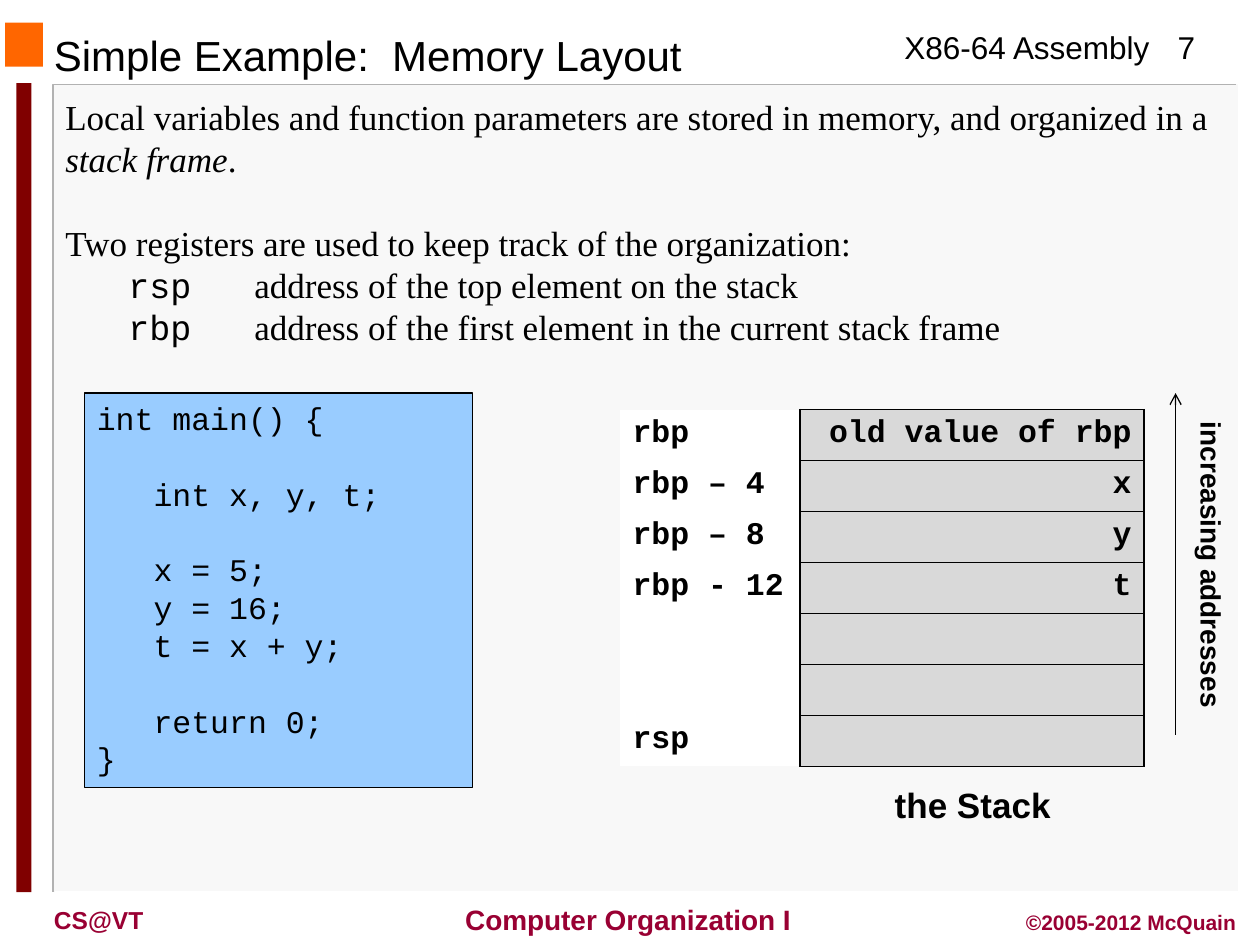
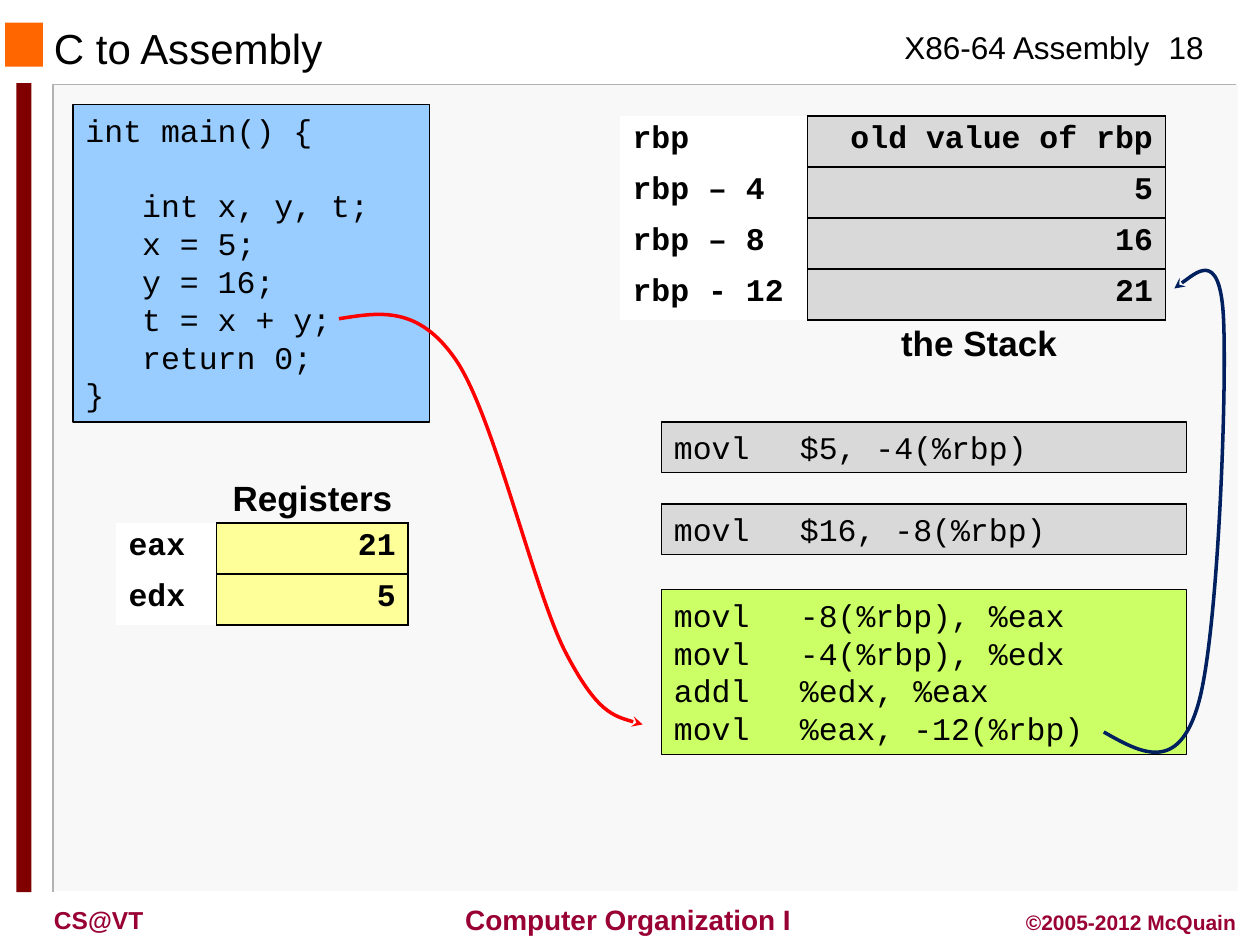
from lxml import etree
from pptx import Presentation
from pptx import util as u
from pptx.dml.color import RGBColor
from pptx.enum import shapes, text
from pptx.oxml import ns

PX = 9144  # 100 px to the inch
BLACK = RGBColor(0x00, 0x00, 0x00)
WHITE = RGBColor(0xFF, 0xFF, 0xFF)
PAPER = RGBColor(0xF8, 0xF8, 0xF8)
SILVER = RGBColor(0xB2, 0xB2, 0xB2)
GREY = RGBColor(0xD9, 0xD9, 0xD9)
ORANGE = RGBColor(0xFF, 0x66, 0x00)
MAROON = RGBColor(0x80, 0x00, 0x00)
WINE = RGBColor(0x99, 0x00, 0x33)
BLUE = RGBColor(0x99, 0xCC, 0xFF)
LIME = RGBColor(0xCC, 0xFF, 0x66)
YELLOW = RGBColor(0xFF, 0xFF, 0x99)
RED = RGBColor(0xFF, 0x00, 0x00)
NAVY = RGBColor(0x00, 0x20, 0x60)
SANS, MONO, SERIF = "Arial", "Courier New", "Times New Roman"
LEFT, MID, RIGHT = text.PP_ALIGN.LEFT, text.PP_ALIGN.CENTER, text.PP_ALIGN.RIGHT
LEAD = 1.2  # line pitch of running text, in font sizes


def px(*sizes):
    return [u.Emu(round(size * PX)) for size in sizes]


def node(parent, tag, **attrs):
    return etree.SubElement(parent, ns.qn(tag), attrs)


def style(para, face, size, color=BLACK, bold=False, align=LEFT):
    font = para.font
    font.name, font.size, font.bold = face, u.Pt(size), bold
    font.color.rgb = color
    para.alignment = align


class Deck:
    def __init__(self):
        self.prs = Presentation()
        self.prs.slide_width, self.prs.slide_height = px(1000, 750)
        self.items = None

    def page(self, title, number, high):
        """Start a slide with the shared frame, title and footers."""
        self.items = self.prs.slides.add_slide(self.prs.slide_layouts[6]).shapes
        self.rect(43, 67, 940, 641, PAPER)
        self.trace([(981, 67), (42, 67), (42, 708)], SILVER, 1)
        self.trace([(983, 67), (983, 708), (44, 708)], WHITE, 1)
        self.rect(4, 18, 30, 35, ORANGE)
        self.rect(13, 66, 12, 642, MAROON)
        self.label(708, 17, 217, 40, "X86-64 Assembly", 18)
        self.label(908, 17, 67, 40, str(number), 18, align=MID)
        self.label(353, 711, 291, 37, "Computer Organization I", 16, WINE, True, MID, True)
        self.label(33, 713, 150, 33, "CS@VT", 14, WINE, True)
        self.label(783, 717, 208, 30, "©2005-2012 McQuain", 12, WINE, True, RIGHT)
        self.label(33, 19, 733, high, title, 24, middle=True)

    def rect(self, x, y, w, h, fill, edge=None):
        item = self.items.add_shape(shapes.MSO_SHAPE.RECTANGLE, *px(x, y, w, h))
        item.shadow.inherit = False
        item.fill.solid()
        item.fill.fore_color.rgb = fill
        if edge is None:
            item.line.fill.background()
        else:
            item.line.color.rgb, item.line.width = edge, u.Pt(0.75)
        return item

    def trace(self, points, color, width):
        """Draw an open outline through the points."""
        spots = [px(*point) for point in points]
        pen = self.items.build_freeform(*spots[0], scale=1)
        pen.add_line_segments(spots[1:], close=False)
        item = pen.convert_to_shape()
        item.shadow.inherit = False
        item.fill.background()
        item.line.color.rgb, item.line.width = color, u.Pt(width)
        return item

    def curve(self, points, color):
        """Draw an arrow of Bezier arcs: a start, then three points per arc."""
        item = self.trace(points, color, 2)
        route = item._element.find(".//" + ns.qn("a:path"))
        steps = route.findall(ns.qn("a:lnTo"))
        for i in range(0, len(steps), 3):
            arc = node(route, "a:cubicBezTo")
            for step in steps[i:i + 3]:
                arc.append(step[0])
                route.remove(step)
        self.head(item, "stealth")

    def head(self, item, kind):
        node(item.line._get_or_add_ln(), "a:tailEnd", type=kind)

    def arrow(self, x1, y1, x2, y2):
        kind = shapes.MSO_CONNECTOR.STRAIGHT
        item = self.items.add_connector(kind, *px(x1, y1, x2, y2))
        item.line.color.rgb, item.line.width = BLACK, u.Pt(0.75)
        self.head(item, "arrow")
        node(item._element.spPr, "a:effectLst")

    def label(self, x, y, w, h, words, size, color=BLACK, bold=False,
              align=LEFT, middle=False, turn=False):
        frame = self.items.add_textbox(*px(x, y, w, h)).text_frame
        frame.word_wrap = True
        if middle:
            frame.vertical_anchor = text.MSO_ANCHOR.MIDDLE
        if turn:
            frame._txBody.bodyPr.set("vert", "vert")
        para = frame.paragraphs[0]
        para.text = words
        style(para, SANS, size, color, bold, align)

    def flow(self, frame, lines, face, size):
        """Fill a frame with lines, each (gap before, indent, runs)."""
        frame.word_wrap = True
        frame.vertical_anchor = text.MSO_ANCHOR.TOP
        for i, (gap, indent, runs) in enumerate(lines):
            para = frame.add_paragraph() if i else frame.paragraphs[0]
            style(para, face, size)
            para.line_spacing = u.Pt(size * LEAD)
            if gap:
                para.space_before = u.Pt(size * LEAD)
            if indent:
                para._p.get_or_add_pPr().set("marL", str(px(indent)[0]))
            for words, font, slant in runs:
                run = para.add_run()
                run.text = words
                if font != face:
                    run.font.name = font
                if slant:
                    run.font.italic = True

    def code(self, x, y, w, h, fill, source):
        lines, gap = [], False
        for row in source.split("\n"):
            bare = row.lstrip(" ")
            if bare:
                lines.append((gap, 15 * (len(row) - len(bare)), [(bare, MONO, False)]))
            gap = not bare
        self.flow(self.rect(x, y, w, h, fill, BLACK).text_frame, lines, MONO, 18)

    def prose(self, x, y, w, h, lines):
        frame = self.items.add_textbox(*px(x, y, w, h)).text_frame
        self.flow(frame, lines, SERIF, 20)

    def cells(self, x, y, widths, fill, rows):
        """Table of names beside boxed values."""
        size = px(x, y, sum(widths), 40.5 * len(rows))
        grid = self.items.add_table(len(rows), 2, *size).table
        grid.first_row = grid.horz_banding = False
        for col, width in zip(grid.columns, px(*widths)):
            col.width = width
        for r, row in enumerate(rows):
            for c, words in enumerate(row):
                cell = grid.cell(r, c)
                cell.text = words
                style(cell.text_frame.paragraphs[0], MONO, 18, bold=True,
                      align=RIGHT if c else LEFT)
                self.edges(cell, "LRTB" if c else "R")
                cell.fill.solid()
                cell.fill.fore_color.rgb = fill if c else WHITE

    def edges(self, cell, shown):
        props = cell._tc.get_or_add_tcPr()
        for side in "LRTB":
            line = node(props, "a:ln" + side, w=str(u.Pt(1)))
            if side in shown:
                node(node(line, "a:solidFill"), "a:srgbClr", val=str(BLACK))
            else:
                node(line, "a:noFill")


def layout(deck):
    deck.page("Simple Example:  Memory Layout", 7, 48)
    deck.code(67, 312, 308, 313, BLUE, """int main() {

   int x, y, t;

   x = 5;
   y = 16;
   t = x + y;

   return 0;
}""")
    deck.cells(492, 325, (143, 273), GREY, [
        ("rbp", "old value of rbp"), ("rbp – 4", "x"), ("rbp – 8", "y"),
        ("rbp - 12", "t"), ("", ""), ("", ""), ("rsp", "")])
    intro = "Local variables and function parameters are stored in memory, and organized in a "
    lines = [
        (False, 0, [(intro, SERIF, False), ("stack frame", SERIF, True), (".", SERIF, False)]),
        (True, 0, [("Two registers are used to keep track of the organization:", SERIF, False)])]
    for name, role in (("rsp", "top element on the stack"),
                       ("rbp", "first element in the current stack frame")):
        lines.append((False, 0, [("\t", SERIF, False), (name, MONO, False),
                                 (f"\taddress of the {role}", SERIF, False)]))
    deck.prose(42, 71, 942, 212, lines)
    deck.label(933, 325, 47, 275, "increasing addresses", 16, bold=True, turn=True)
    deck.arrow(933, 583, 933, 312)
    deck.label(674, 617, 196, 44, "the Stack", 20, bold=True, align=MID)


def assembly(deck):
    deck.page("C to Assembly", 18, 38)
    deck.code(58, 83, 283, 252, BLUE, """int main() {

   int x, y, t;
   x = 5;
   y = 16;
   t = x + y;
   return 0;
}""")
    deck.code(525, 335, 417, 40, GREY, "movl\t$5, -4(%rbp)")
    deck.code(525, 400, 417, 40, GREY, "movl\t$16, -8(%rbp)")
    deck.code(525, 468, 417, 131, LIME, "movl\t-8(%rbp), %eax\nmovl\t-4(%rbp), %edx\n"
              "addl\t%edx, %eax\nmovl\t%eax, -12(%rbp)")
    deck.curve([(269, 253), (301, 248), (332, 242), (362, 286), (392, 330),
                (424, 470), (449, 518), (474, 566), (492, 570), (510, 575)], RED)
    deck.cells(492, 92, (149, 284), GREY, [
        ("rbp", "old value of rbp"), ("rbp – 4", "5"), ("rbp – 8", "16"),
        ("rbp - 12", "21")])
    deck.cells(92, 415, (80, 152), YELLOW, [("eax", "21"), ("edx", "5")])
    deck.label(679, 250, 196, 44, "the Stack", 20, bold=True, align=MID)
    deck.label(150, 373, 196, 44, "Registers", 20, bold=True, align=MID)
    deck.curve([(876, 581), (906, 598), (935, 614), (951, 559), (967, 504),
                (974, 306), (971, 251), (968, 196), (932, 229), (932, 229)], NAVY)


def main():
    deck = Deck()
    layout(deck)
    assembly(deck)
    deck.prs.save("out.pptx")


if __name__ == "__main__":
    main()
